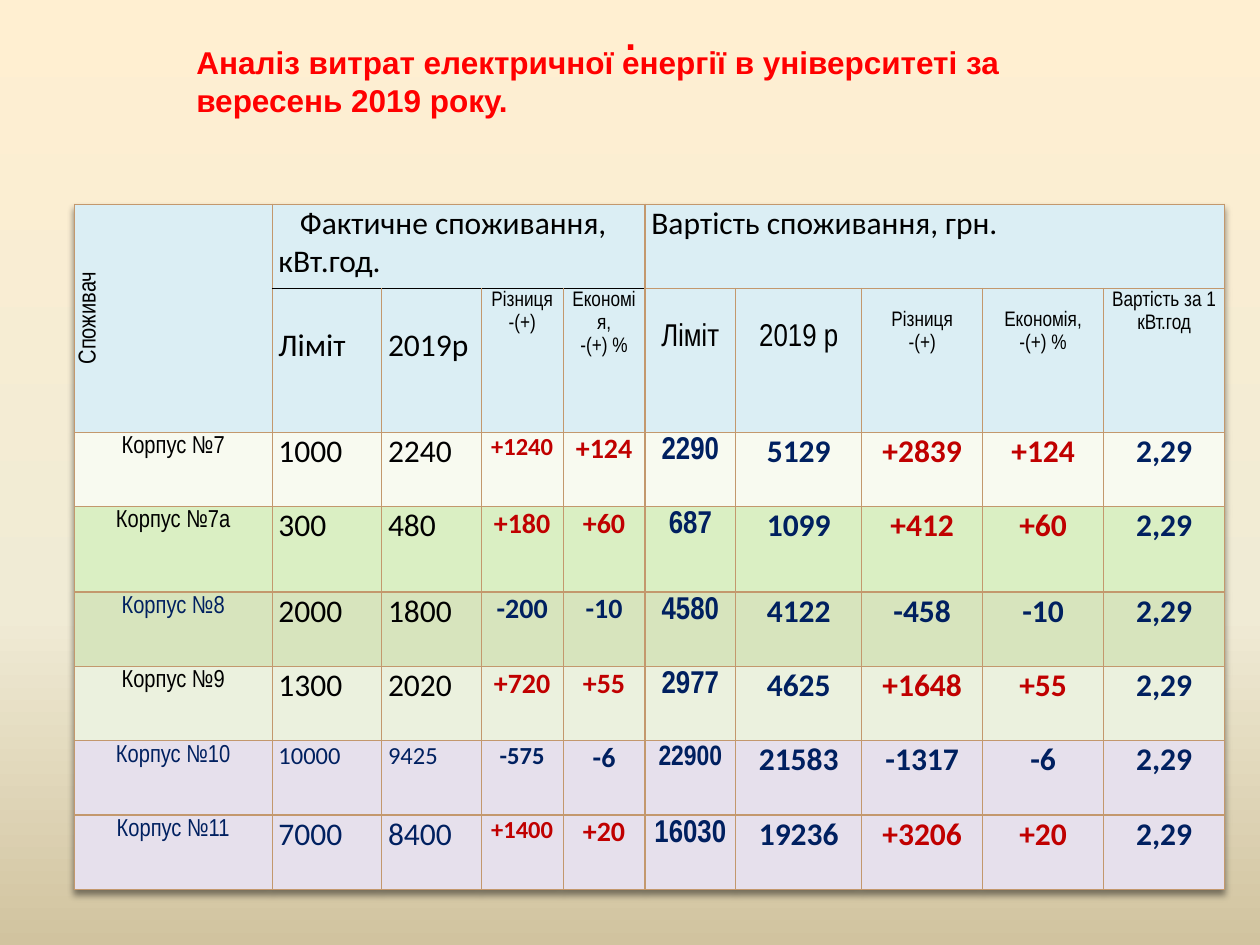
from dataclasses import dataclass

from lxml import etree
from pptx import Presentation
from pptx.dml.color import RGBColor
from pptx.enum.text import MSO_ANCHOR, PP_ALIGN
from pptx.oxml.ns import qn
from pptx.util import Inches, Pt

CENTER, LEFT, MIDDLE = PP_ALIGN.CENTER, PP_ALIGN.LEFT, MSO_ANCHOR.MIDDLE
CALIBRI, NARROW = "Calibri", "Arial Narrow"
BLACK, NAVY, RED, BRIGHT_RED = "000000", "002060", "C00000", "FF0000"
BORDER, HEADER_FILL = "C3986D", "DBEEF4"
COLUMN_WIDTHS = [1.57, 0.87, 0.79, 0.65, 0.65, 0.72, 1, 0.96, 0.96, 0.96]
ROW_HEIGHTS = [0.67, 1.14, 0.59, 0.68, 0.59, 0.59, 0.59, 0.59]


@dataclass
class Style:
    size: int
    font: str = CALIBRI
    color: str = BLACK
    bold: bool = False
    align: PP_ALIGN = CENTER
    spacing: float = 1.0


@dataclass
class Header:
    row: int
    column: int
    text: str
    style: Style
    top: float = 0  # inches above the text


@dataclass
class Consumer:
    values: list[str]
    fill: str
    name_color: str
    limit_color: str = BLACK
    limit_size: int = 18
    difference_size: int = 16
    cost_size: int = 18


PLAIN = Style(18, align=LEFT)
SMALL = Style(12, NARROW, spacing=1.15)
LARGE = Style(18, NARROW, spacing=1.15)
HEADERS = [
    Header(0, 0, "Споживач", Style(14, NARROW, spacing=1.15)),
    Header(0, 1, "Фактичне споживання, кВт.год.", PLAIN),
    Header(0, 5, "Вартість споживання, грн.", PLAIN),
    Header(1, 1, "Ліміт", PLAIN, 0.3),
    Header(1, 2, "2019р", PLAIN, 0.3),
    Header(1, 3, "Різниця\n-(+)", SMALL),
    Header(1, 4, "Економія,\n-(+) %", SMALL),
    Header(1, 5, "Ліміт", LARGE, 0.24),
    Header(1, 6, "2019 р", LARGE, 0.24),
    Header(1, 7, "Різниця\n-(+)", SMALL, 0.16),
    Header(1, 8, "Економія,\n-(+) %", SMALL, 0.16),
    Header(1, 9, "Вартість за 1 кВт.год", SMALL),
]
CONSUMERS = [
    Consumer(["Корпус №7", "1000", "2240", "+1240", "+124", "2290", "5129", "+2839", "+124", "2,29"],
             "F8FAF0", BLACK, difference_size=14),
    Consumer(["Корпус №7а", "300", "480", "+180", "+60", "687", "1099", "+412", "+60", "2,29"],
             "DAEFC3", BLACK),
    Consumer(["Корпус №8", "2000", "1800", "-200", "-10", "4580", "4122", "-458", "-10", "2,29"],
             "D7E4BD", NAVY),
    Consumer(["Корпус №9", "1300", "2020", "+720", "+55", "2977", "4625", "+1648", "+55", "2,29"],
             "EBF1DE", BLACK),
    Consumer(["Корпус №10", "10000", "9425", "-575", "-6", "22900", "21583", "-1317", "-6", "2,29"],
             "E6E0EC", NAVY, NAVY, 14, 14, 16),
    Consumer(["Корпус №11", "7000", "8400", "+1400", "+20", "16030", "19236", "+3206", "+20", "2,29"],
             "E6E0EC", NAVY, NAVY, difference_size=14),
]


def rgb(color: str) -> RGBColor:
    return RGBColor.from_string(color)


def write(frame, text: str, style: Style) -> None:
    frame.text = text
    for paragraph in frame.paragraphs:
        paragraph.alignment = style.align
        paragraph.line_spacing = style.spacing
        font = paragraph.font
        font.size, font.name, font.bold = Pt(style.size), style.font, style.bold
        font.color.rgb = rgb(style.color)


def add_text(slide, box: tuple, text: str, style: Style):
    frame = slide.shapes.add_textbox(*map(Inches, box)).text_frame
    frame.word_wrap = True
    write(frame, text, style)
    return frame


def add_solid(parent, color: str) -> None:
    fill = etree.SubElement(parent, qn("a:solidFill"))
    etree.SubElement(fill, qn("a:srgbClr"), val=color)


def format_cell(cell, row: int, column: int, fill: str) -> None:
    """Draw the borders, then the fill and the margins."""
    under_group = 1 <= column <= 4
    for side in "LRTB":
        dark = under_group and (row, side) in ((0, "B"), (1, "T"))
        width = Pt(1 if dark else 0.79)
        line = etree.SubElement(cell._tc.get_or_add_tcPr(), qn(f"a:ln{side}"), w=str(width))
        add_solid(line, BLACK if dark else BORDER)
    cell.fill.solid()
    cell.fill.fore_color.rgb = rgb(fill)
    cell.margin_left = cell.margin_right = Inches(0.05)
    cell.margin_top = cell.margin_bottom = 0


def value_style(consumer: Consumer, column: int) -> Style:
    if column == 0:
        return Style(14, NARROW, consumer.name_color, spacing=1.15)
    if column <= 2:
        return Style(consumer.limit_size, color=consumer.limit_color, align=LEFT)
    if column == 5:
        return Style(consumer.cost_size, NARROW, NAVY, True, spacing=1.15)
    color = RED if consumer.values[column].startswith("+") else NAVY
    size = {3: consumer.difference_size, 4: 16}.get(column, 18)
    return Style(size, color=color, bold=True)


def add_shadow(table) -> None:
    effects = etree.Element(qn("a:effectLst"))
    shadow = etree.SubElement(effects, qn("a:outerShdw"), blurRad=str(Pt(4)),
                              dist=str(Pt(3)), dir="5400000", rotWithShape="0")
    color = etree.SubElement(shadow, qn("a:srgbClr"), val=BLACK)
    etree.SubElement(color, qn("a:alpha"), val="45000")
    table._tbl.tblPr.insert(0, effects)


def add_consumption_table(slide) -> None:
    box = map(Inches, (0.59, 1.62, sum(COLUMN_WIDTHS), sum(ROW_HEIGHTS)))
    table = slide.shapes.add_table(len(ROW_HEIGHTS), len(COLUMN_WIDTHS), *box).table
    table.first_row = table.horz_banding = False
    for column, width in zip(table.columns, COLUMN_WIDTHS):
        column.width = Inches(width)
    for row, height in zip(table.rows, ROW_HEIGHTS):
        row.height = Inches(height)
    fills = [HEADER_FILL] * 2 + [consumer.fill for consumer in CONSUMERS]
    for row, fill in enumerate(fills):
        for column in range(len(COLUMN_WIDTHS)):
            format_cell(table.cell(row, column), row, column, fill)

    # Headings
    for first, last in (((0, 0), (1, 0)), ((0, 1), (0, 4)), ((0, 5), (0, 9))):
        table.cell(*first).merge(table.cell(*last))
    for header in HEADERS:
        cell = table.cell(header.row, header.column)
        write(cell.text_frame, header.text, header.style)
        cell.margin_top = Inches(header.top)
    corner = table.cell(0, 0)
    corner.vertical_anchor = MIDDLE
    corner._tc.get_or_add_tcPr().set("vert", "vert270")
    group = table.cell(0, 1).text_frame.paragraphs[0]
    group._p.get_or_add_pPr().set("indent", str(Inches(0.17)))

    # Consumers
    for row, consumer in enumerate(CONSUMERS, start=2):
        for column, value in enumerate(consumer.values):
            write(table.cell(row, column).text_frame, value, value_style(consumer, column))
    add_shadow(table)


def set_background(slide) -> None:
    fill = slide.background.fill
    fill.gradient()
    stops = fill._fill._gradFill.find(qn("a:gsLst"))
    for stop in list(stops):
        stops.remove(stop)
    for position, color in ((0, "FFEFD1"), (65, "F0EBD5"), (100, "D1C39F")):
        stop = etree.SubElement(stops, qn("a:gs"), pos=str(position * 1000))
        etree.SubElement(stop, qn("a:srgbClr"), val=color)
    fill.gradient_angle = 270


def main() -> None:
    presentation = Presentation()
    presentation.slide_width, presentation.slide_height = Inches(10), Inches(7.5)
    slide = presentation.slides.add_slide(presentation.slide_layouts[6])
    set_background(slide)

    # Titles
    dot = add_text(slide, (0.28, -0.34, 9.45, 1.61), ".\v",
                   Style(22, "Arial", BRIGHT_RED, True))
    dot.vertical_anchor = MIDDLE
    add_consumption_table(slide)
    add_text(slide, (1.46, 0.29, 7.72, 0.71),
             "Аналіз витрат електричної енергії в університеті за вересень 2019 року.",
             Style(18, "Arial", BRIGHT_RED, True, LEFT))
    presentation.save("out.pptx")


if __name__ == "__main__":
    main()
